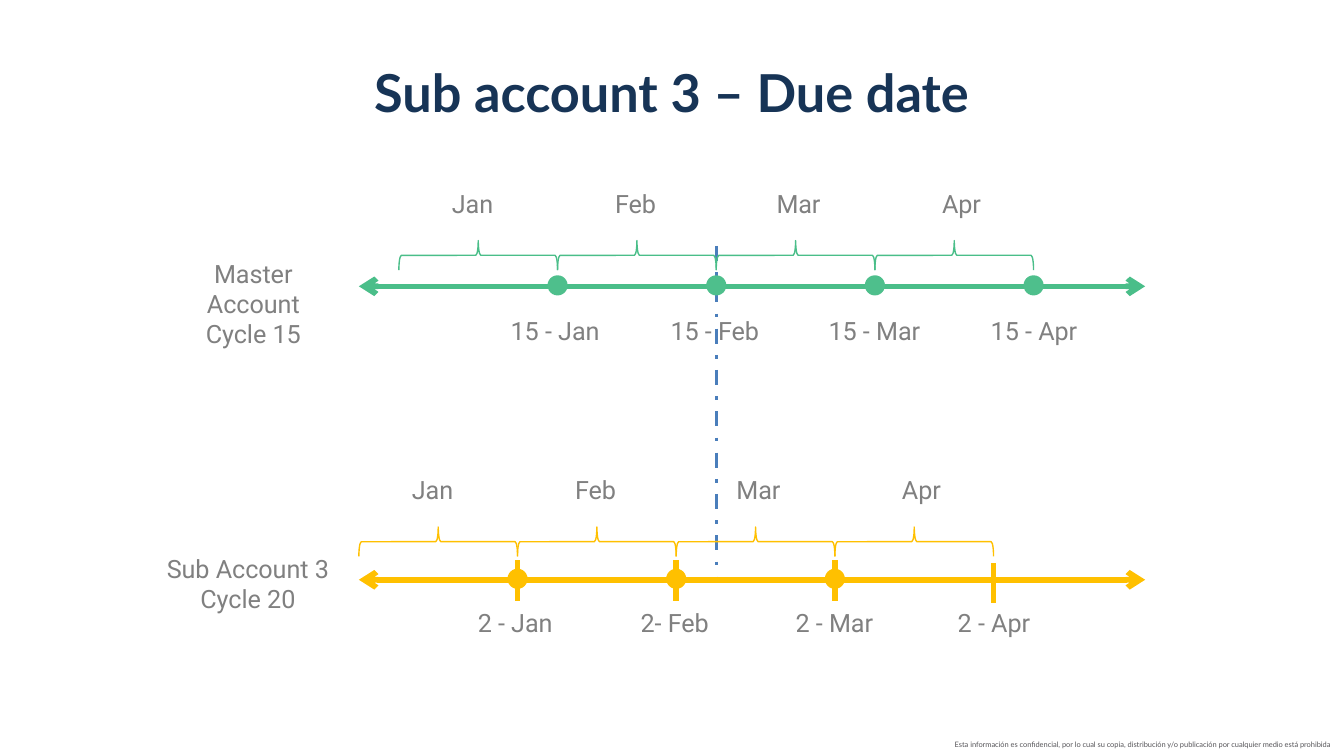
from lxml.etree import SubElement
from pptx import Presentation
from pptx.dml.color import RGBColor
from pptx.enum.dml import MSO_LINE
from pptx.enum.shapes import MSO_CONNECTOR, MSO_SHAPE
from pptx.enum.text import MSO_ANCHOR, MSO_AUTO_SIZE, PP_ALIGN
from pptx.oxml.ns import qn
from pptx.util import Pt

COLORS = {
    "navy": "173456", "gray": "808080", "footer": "57565A", "blue": "4A7EBB",
    "green": "4ABE89", "green_dot": "4EBF8C", "yellow": "FFC000",
}
LABEL = {"name": "Roboto", "size": Pt(13.5)}
MONTHS = ["Jan", "Feb", "Mar", "Apr"]
MONTH_WIDTH = 85
AXIS_LEFT, AXIS_RIGHT = 192.25, 613.5


def rgb(name):
    return RGBColor.from_string(COLORS[name])


def write(tf, lines, color, font, align=PP_ALIGN.CENTER):
    tf.word_wrap = True
    for i, line in enumerate(lines):
        p = tf.paragraphs[0] if i == 0 else tf.add_paragraph()
        p.alignment = align
        r = p.add_run()
        r.text = line
        r.font.color.rgb = rgb(color)
        for key, value in font.items():
            setattr(r.font, key, value)


def add_title(s, text):
    sp = s.shapes.title
    box = {"left": Pt(161.3), "top": Pt(26.6), "width": Pt(396.7), "height": Pt(45.4)}
    for key, value in box.items():
        setattr(sp, key, value)
    tf = sp.text_frame
    tf.auto_size = MSO_AUTO_SIZE.NONE
    tf.vertical_anchor = MSO_ANCHOR.MIDDLE
    write(tf, [text], "navy", {"name": "Lato", "size": Pt(28), "bold": True})


def add_label(s, center, top, width, lines):
    height = 7.5 + 16 * len(lines)
    sp = s.shapes.add_textbox(Pt(center - width / 2), Pt(top), Pt(width), Pt(height))
    write(sp.text_frame, lines, "gray", LABEL)


def add_line(s, x1, y1, x2, y2, color, width=3, dash=None, arrows=False):
    c = s.shapes.add_connector(MSO_CONNECTOR.STRAIGHT, Pt(x1), Pt(y1), Pt(x2), Pt(y2))
    c.line.color.rgb = rgb(color)
    c.line.width = Pt(width)
    if dash:
        c.line.dash_style = dash
    if arrows:
        ln = c.line._get_or_add_ln()
        for end in ("a:headEnd", "a:tailEnd"):
            SubElement(ln, qn(end), type="arrow")
    SubElement(c._element.spPr, qn("a:effectLst"))


def add_dot(s, x, y, color, size=10.8):
    sp = s.shapes.add_shape(MSO_SHAPE.OVAL, Pt(x - size / 2), Pt(y - size / 2), Pt(size), Pt(size))
    sp.shadow.inherit = False
    sp.fill.solid()
    sp.fill.fore_color.rgb = rgb(color)
    sp.line.fill.background()


def add_brace(s, x, y, color, depth=15.8):
    """Add a brace one month wide, centred on x, y, with its point upwards."""
    sp = s.shapes.add_shape(MSO_SHAPE.LEFT_BRACE, Pt(x - depth / 2), Pt(y - MONTH_WIDTH / 2),
                            Pt(depth), Pt(MONTH_WIDTH))
    sp.rotation = 90
    sp.shadow.inherit = False
    sp.fill.background()
    sp.line.color.rgb = rgb(color)
    sp.line.width = Pt(0.75)


def add_timeline(s, start, axis_y, month_top, date_top, color, dot_color, dates, dots, ticks=()):
    """Add an axis whose first month begins at start; ticks are their top positions."""
    ends = [start + MONTH_WIDTH * (i + 1) for i in range(len(MONTHS))]
    for x, top in zip(ends, ticks):
        add_line(s, x, top, x, top + 21.6, color)
    add_line(s, AXIS_LEFT, axis_y, AXIS_RIGHT, axis_y, color, arrows=True)
    for i, (x, month, date) in enumerate(zip(ends, MONTHS, dates)):
        add_label(s, start + 39.5 + 87.3 * i, month_top, 61, [month])
        add_brace(s, x - MONTH_WIDTH / 2, month_top + 39.6, color)
        add_label(s, x - 1.3 + 0.5 * i, date_top, 74, [date])
    for x in ends[:dots]:
        add_dot(s, x, axis_y - 0.5, dot_color)


def add_footer(s, text):
    sp = s.shapes.add_textbox(Pt(433.5), Pt(393), Pt(286.5), Pt(12))
    write(sp.text_frame, [text], "footer", {"name": "Lato", "size": Pt(4)}, PP_ALIGN.RIGHT)


def main():
    prs = Presentation()
    prs.slide_width, prs.slide_height = Pt(720), Pt(405)
    s = prs.slides.add_slide(prs.slide_layouts[5])
    add_footer(s, "Esta información es confidencial, por lo cual su copia, distribución y/o "
                  "publicación por cualquier medio está prohibida")
    add_title(s, "Sub account 3 – Due date")
    add_label(s, 135.7, 134.6, 107, ["Master Account", "Cycle 15"])
    add_label(s, 132.8, 293, 101.5, ["Sub Account 3", "Cycle 20"])
    add_line(s, 383.9, 131.8, 383.9, 309.6, "blue", 2, MSO_LINE.DASH_DOT)
    add_timeline(s, 213.7, 153.4, 97.2, 165.6, "green", "green_dot",
                 [f"15 - {month}" for month in MONTHS], dots=4)
    add_timeline(s, 192.25, 310.6, 250.6, 321.8, "yellow", "yellow",
                 ["2 - Jan", "2- Feb", "2 - Mar", "2 - Apr"], dots=3,
                 ticks=[300.2, 300.2, 300.2, 301.7])
    prs.save("out.pptx")


if __name__ == "__main__":
    main()
